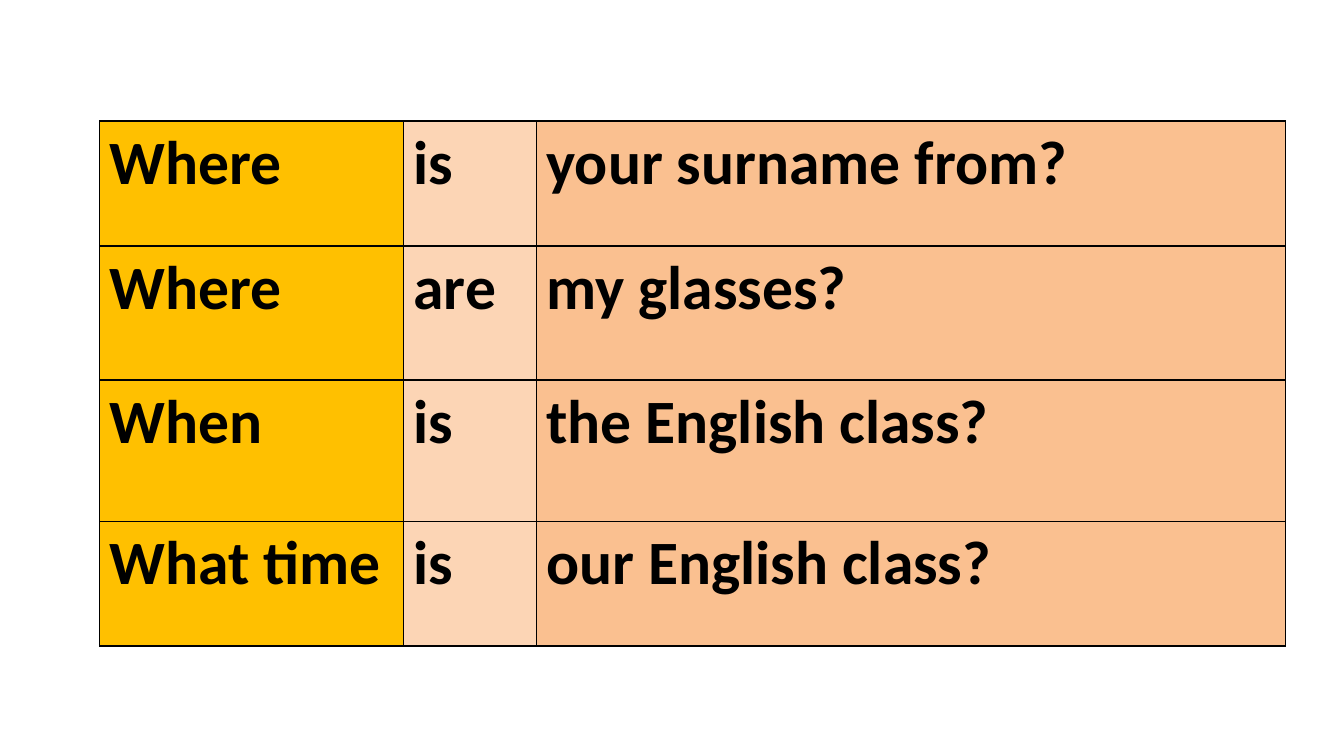
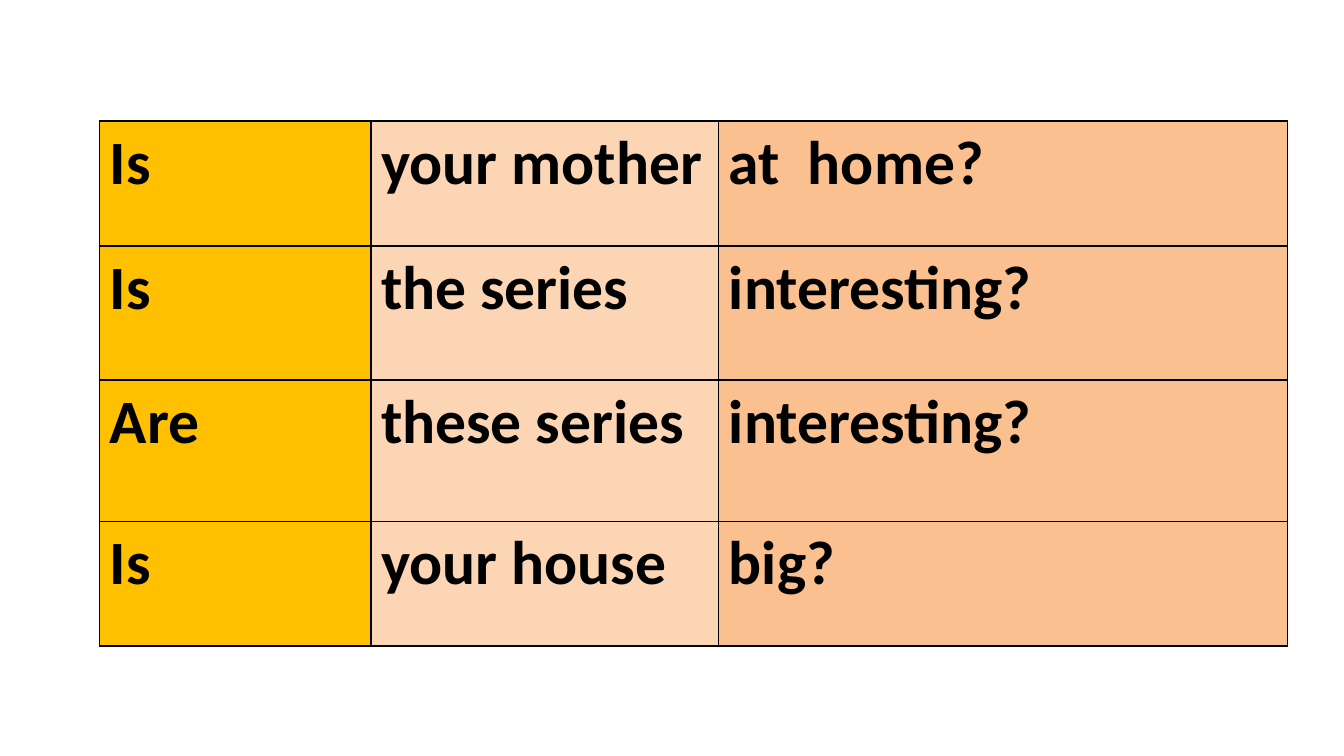
"""Build two slides of question patterns, each a colour-coded table."""
from lxml import etree
from pptx import Presentation
from pptx import util as u
from pptx.dml.color import RGBColor
from pptx.oxml.ns import qn

COLORS = {"question": "FFC000", "middle": "FCD5B5", "ending": "FAC090", "ink": "000000"}
COLUMN_FILLS = ("question", "middle", "ending")
FONT = {"name": "Calibri", "size": u.Pt(44), "bold": True}
LEFT, TOP = 0.99, 1.2
ROW_HEIGHTS = (1.24, 1.33, 1.4, 1.24)
BORDER_SIDES = ("a:lnL", "a:lnR", "a:lnT", "a:lnB")
BORDER_WIDTH = u.Pt(1)

TABLES = [
    {
        "widths": (3.01, 1.32, 7.43),
        "rows": [
            ("Where", "is", "your surname from?"),
            ("Where", "are", "my glasses?"),
            ("When", "is", "the English class?"),
            ("What time", "is", "our English class?"),
        ],
    },
    {
        "widths": (2.69, 3.45, 5.64),
        "rows": [
            ("Is", "your mother", "at  home?"),
            ("Is", "the series", "interesting?"),
            ("Are", "these series", "interesting?"),
            ("Is", "your house", "big?"),
        ],
    },
]


def add_borders(cell):
    """Outline a cell on all four sides."""
    properties = cell._tc.get_or_add_tcPr()
    for position, side in enumerate(BORDER_SIDES):
        line = etree.Element(qn(side), w=str(BORDER_WIDTH))
        fill = etree.SubElement(line, qn("a:solidFill"))
        etree.SubElement(fill, qn("a:srgbClr"), val=COLORS["ink"])
        properties.insert(position, line)


def fill_cell(cell, words, color):
    """Write the words in a cell and format it."""
    cell.fill.solid()
    cell.fill.fore_color.rgb = RGBColor.from_string(COLORS[color])
    add_borders(cell)
    run = cell.text_frame.paragraphs[0].add_run()
    run.text = words
    for attribute, value in FONT.items():
        setattr(run.font, attribute, value)
    run.font.color.rgb = RGBColor.from_string(COLORS["ink"])


def add_question_table(slide, widths, rows):
    """Add one table of questions to a slide."""
    table = slide.shapes.add_table(
        len(rows), len(widths), u.Inches(LEFT), u.Inches(TOP),
        u.Inches(sum(widths)), u.Inches(sum(ROW_HEIGHTS)),
    ).table
    table.first_row = table.horz_banding = False
    for column, width in zip(table.columns, widths):
        column.width = u.Inches(width)
    for row, height, phrases in zip(table.rows, ROW_HEIGHTS, rows):
        row.height = u.Inches(height)
        for cell, words, color in zip(row.cells, phrases, COLUMN_FILLS):
            fill_cell(cell, words, color)


def main():
    """Create and save the presentation."""
    presentation = Presentation()
    presentation.slide_width = u.Inches(13.33)
    presentation.slide_height = u.Inches(7.5)
    blank_layout = presentation.slide_layouts.get_by_name("Blank")
    for content in TABLES:
        slide = presentation.slides.add_slide(blank_layout)
        add_question_table(slide, **content)
    presentation.save("out.pptx")


if __name__ == "__main__":
    main()
